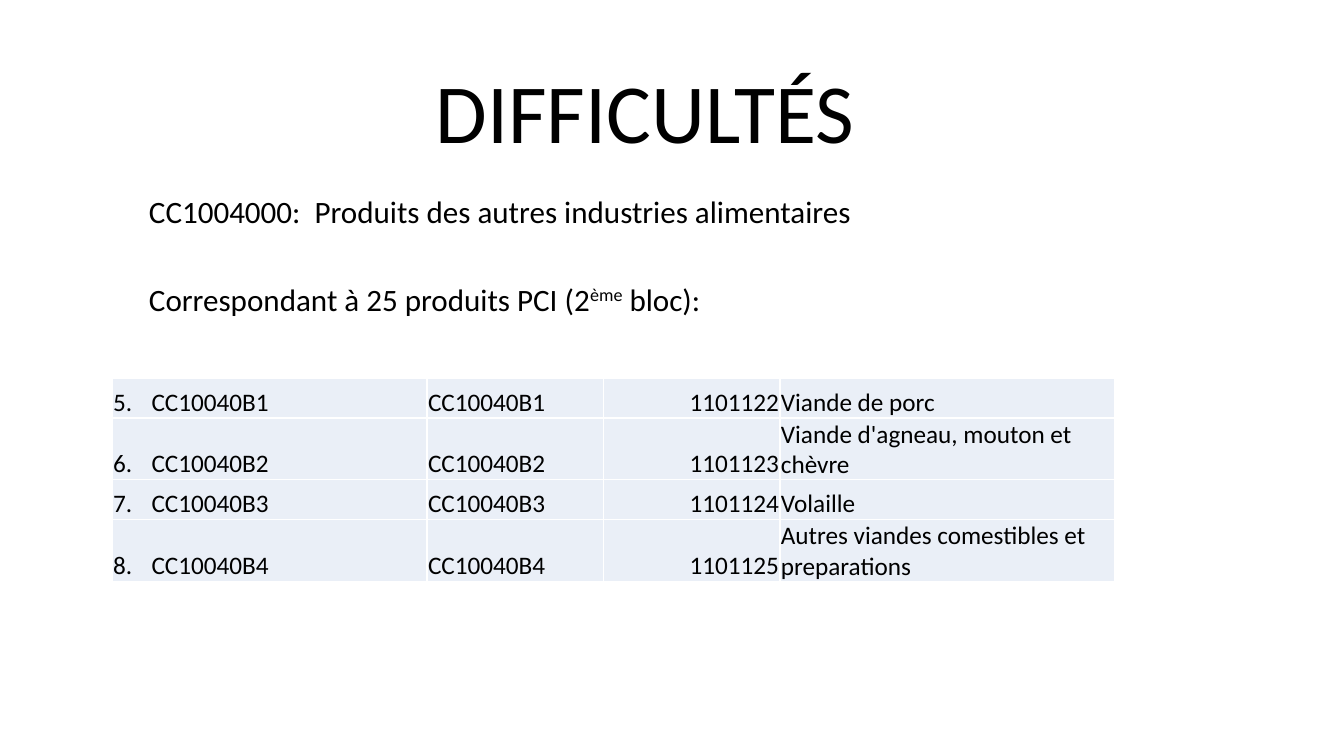
from lxml import etree
from pptx import Presentation
from pptx.dml.color import RGBColor
from pptx.enum.text import MSO_ANCHOR, PP_ALIGN
from pptx.oxml.ns import qn
from pptx.util import Inches, Pt

LEFT, CENTER, RIGHT, JUSTIFY = PP_ALIGN.LEFT, PP_ALIGN.CENTER, PP_ALIGN.RIGHT, PP_ALIGN.JUSTIFY
TOP, BOTTOM = MSO_ANCHOR.TOP, MSO_ANCHOR.BOTTOM

SLIDE_WIDTH, SLIDE_HEIGHT = Inches(13.33), Inches(7.5)
FONT = "Calibri"
BLACK, WHITE, PALE_BLUE = "000000", "FFFFFF", "EAEFF7"

COLUMN_SHARES = (31.4, 17.6, 17.6, 33.4)
COLUMN_ALIGNMENTS = (LEFT, LEFT, RIGHT, LEFT)
FIRST_NUMBER = 5
PRODUCTS = (
    ("CC10040B1", "1101122", "Viande de porc"),
    ("CC10040B2", "1101123", "Viande d'agneau, mouton et chèvre"),
    ("CC10040B3", "1101124", "Volaille"),
    ("CC10040B4", "1101125", "Autres viandes comestibles et preparations"),
)


def color(hex_string):
    """Turn a hex string into a colour."""
    return RGBColor.from_string(hex_string)


def box(left, top, width, height):
    """Turn percentages of the slide into a box of lengths."""
    return (
        int(SLIDE_WIDTH * left / 100),
        int(SLIDE_HEIGHT * top / 100),
        int(SLIDE_WIDTH * width / 100),
        int(SLIDE_HEIGHT * height / 100),
    )


def write(paragraph, text, size=18, fill=BLACK, align=LEFT, line=None, before=None, raised=None):
    """Add formatted text to a paragraph."""
    paragraph.alignment = align
    if line is not None:
        paragraph.line_spacing = line
    if before is not None:
        paragraph.space_before = Pt(before)
    run = paragraph.add_run()
    run.text = text
    run.font.name = FONT
    run.font.size = Pt(size)
    run.font.color.rgb = color(fill)
    if raised is not None:
        run.font._element.set("baseline", str(raised * 1000))


def add_text_frame(slide, area, anchor):
    """Add a wrapping text box and return its frame."""
    frame = slide.shapes.add_textbox(*area).text_frame
    frame.word_wrap = True
    frame.vertical_anchor = anchor
    return frame


def add_title(slide, area):
    """Place the heading at the bottom of its box."""
    frame = add_text_frame(slide, area, BOTTOM)
    write(frame.paragraphs[0], "DIFFICULTÉS", size=60, align=CENTER, line=0.9)


def add_introduction(slide, area):
    """Place the product group and its count."""
    frame = add_text_frame(slide, area, TOP)
    style = {"size": 22.2, "align": JUSTIFY, "line": 0.8}
    group = "CC1004000:  Produits des autres industries alimentaires"
    write(frame.paragraphs[0], group, before=10, **style)
    count = frame.add_paragraph()
    for text, raised in (("Correspondant à 25 produits PCI (2", None), ("ème", 30), (" bloc):", None)):
        write(count, text, before=41.5, raised=raised, **style)


def number(paragraph, start):
    """Give a paragraph an automatic number with a hanging indent."""
    properties = paragraph._p.get_or_add_pPr()
    properties.set("marL", str(Inches(0.38)))
    properties.set("indent", str(-Inches(0.38)))
    etree.SubElement(properties, qn("a:buFont"), typeface=FONT)
    etree.SubElement(properties, qn("a:buAutoNum"), type="arabicPeriod", startAt=str(start))


def style_cell(cell):
    """Set the borders, fill, margins and anchor of a cell."""
    properties = cell._tc.get_or_add_tcPr()
    for side in ("lnL", "lnR", "lnT", "lnB"):
        border = etree.SubElement(properties, qn(f"a:{side}"), w=str(Pt(1)))
        solid = etree.SubElement(border, qn("a:solidFill"))
        etree.SubElement(solid, qn("a:srgbClr"), val=WHITE)
    cell.fill.solid()
    cell.fill.fore_color.rgb = color(PALE_BLUE)
    cell.margin_left = cell.margin_right = cell.margin_top = Inches(0.01)
    cell.margin_bottom = 0
    cell.vertical_anchor = BOTTOM


def add_products(slide, area):
    """Place the table of numbered products."""
    table = slide.shapes.add_table(len(PRODUCTS), len(COLUMN_SHARES), *area).table
    table.first_row = table.horz_banding = False
    for column, share in zip(table.columns, COLUMN_SHARES):
        column.width = int(area[2] * share / 100)
    for row_index, (code, item, label) in enumerate(PRODUCTS):
        for column_index, text in enumerate((code, code, item, label)):
            cell = table.cell(row_index, column_index)
            style_cell(cell)
            paragraph = cell.text_frame.paragraphs[0]
            write(paragraph, text, align=COLUMN_ALIGNMENTS[column_index])
            if column_index == 0:
                number(paragraph, FIRST_NUMBER + row_index)


def main():
    """Build the slide and save it."""
    presentation = Presentation()
    presentation.slide_width, presentation.slide_height = SLIDE_WIDTH, SLIDE_HEIGHT
    slide = presentation.slides.add_slide(presentation.slide_layouts[6])
    add_title(slide, box(10.5, 2.5, 75, 19.5))
    add_introduction(slide, box(10.35, 25.7, 75, 17.5))
    add_products(slide, box(8.35, 50, 74.6, 21.2))
    presentation.save("out.pptx")


if __name__ == "__main__":
    main()
